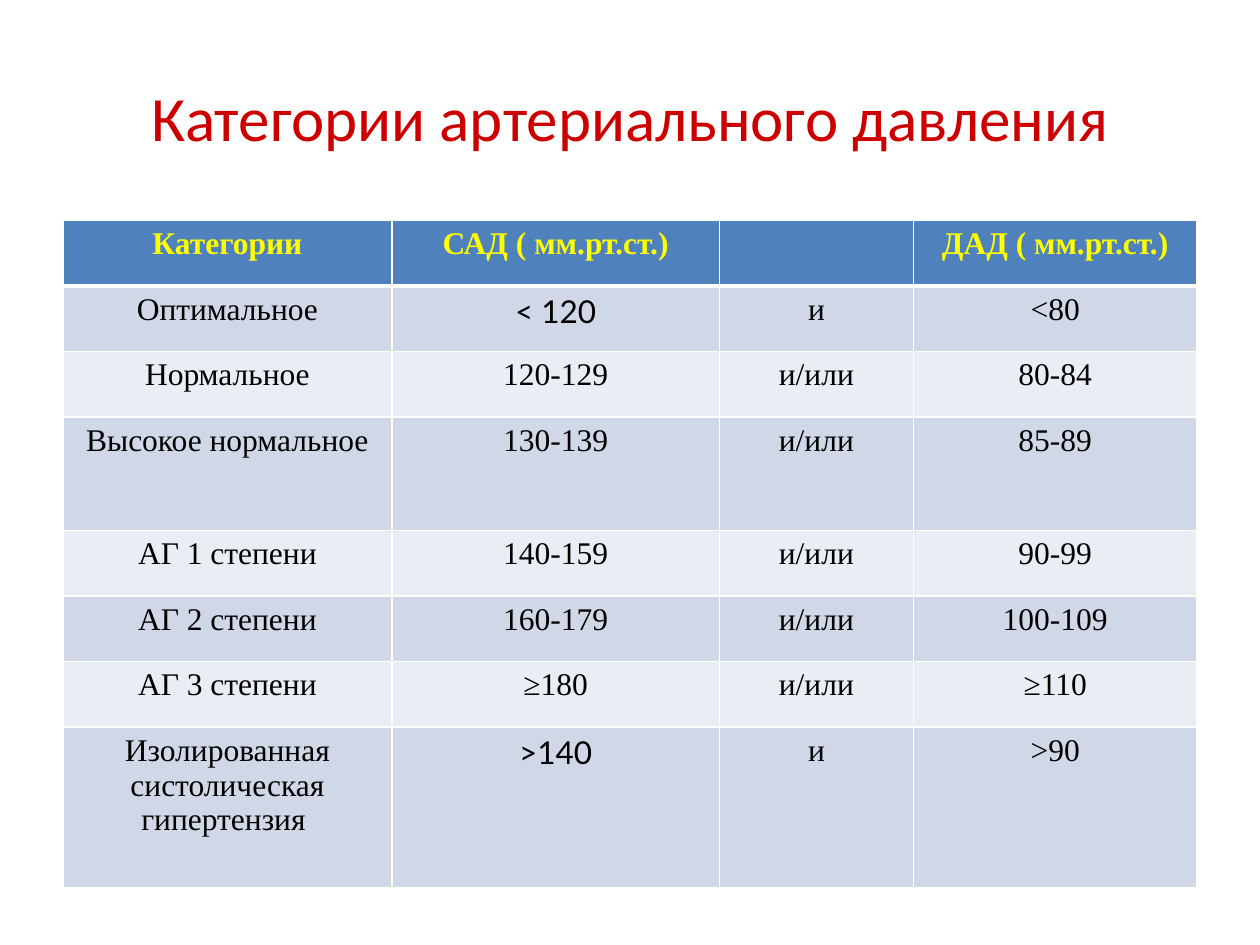
from lxml import etree
from pptx import Presentation
from pptx.dml.color import RGBColor
from pptx.enum.text import MSO_ANCHOR, PP_ALIGN
from pptx.oxml.ns import qn
from pptx.util import Inches, Pt

CENTER = PP_ALIGN.CENTER
MIDDLE = MSO_ANCHOR.MIDDLE

RED = RGBColor(0xCC, 0x00, 0x00)
BLUE = RGBColor(0x4F, 0x81, 0xBD)
YELLOW = RGBColor(0xFF, 0xFF, 0x00)
BLACK = RGBColor(0x00, 0x00, 0x00)
WHITE = RGBColor(0xFF, 0xFF, 0xFF)
BANDS = (RGBColor(0xD0, 0xD8, 0xE8), RGBColor(0xE9, 0xED, 0xF4))

SERIF = "Times New Roman"
SANS = "Lato"

COLS = (2.61, 2.6, 1.54, 2.25)
ROWS = (0.52, 0.52, 0.52, 0.9, 0.52, 0.52, 0.52, 1.28)
DATA = (
    ("Категории", "САД ( мм.рт.ст.)", "", "ДАД ( мм.рт.ст.)"),
    ("Оптимальное", "< 120", "и", "<80"),
    ("Нормальное", "120-129", "и/или", "80-84"),
    ("Высокое нормальное", "130-139", "и/или", "85-89"),
    ("АГ 1 степени", "140-159", "и/или", "90-99"),
    ("АГ 2 степени", "160-179", "и/или", "100-109"),
    ("АГ 3 степени", "≥180", "и/или", "≥110"),
    ("Изолированная систолическая гипертензия ", ">140", "и", ">90"),
)
SANS_CELLS = {(1, 1), (7, 1)}


class Deck:
    def __init__(self):
        self.prs = Presentation()
        self.prs.slide_width = Inches(10)
        self.prs.slide_height = Inches(7.5)
        self.slide = self.prs.slides.add_slide(self.prs.slide_layouts[5])

    def label(self, frame, text, font, size, color, bold=False):
        para = frame.paragraphs[0]
        para.alignment = CENTER
        if not text:
            return
        run = para.add_run()
        run.text = text
        run.font.name = font
        run.font.size = Pt(size)
        run.font.bold = bold
        run.font.color.rgb = color

    def title(self, text):
        shape = self.slide.shapes.title
        shape.left, shape.top = Inches(0.5), Inches(0.3)
        shape.width, shape.height = Inches(9), Inches(1.25)
        shape.text_frame.vertical_anchor = MIDDLE
        self.label(shape.text_frame, text, "Calibri", 36, RED)

    def border(self, cell, side, width):
        props = cell._tc.get_or_add_tcPr()
        line = etree.SubElement(props, qn(f"a:ln{side}"), w=str(Pt(width)))
        fill = etree.SubElement(line, qn("a:solidFill"))
        etree.SubElement(fill, qn("a:srgbClr"), val=str(WHITE))

    def cell(self, cell, row, col, text):
        head = row == 0
        # The rule under the header is shared by the first two rows.
        widths = {"L": 1, "R": 1, "T": 3 if row == 1 else 1, "B": 3 if head else 1}
        for side, width in widths.items():
            self.border(cell, side, width)
        cell.fill.solid()
        cell.fill.fore_color.rgb = BLUE if head else BANDS[(row - 1) % 2]
        font = SANS if (row, col) in SANS_CELLS else SERIF
        self.label(cell.text_frame, text, font, 18, YELLOW if head else BLACK, head)

    def table(self, data, left, top):
        table = self.slide.shapes.add_table(
            len(ROWS), len(COLS), Inches(left), Inches(top),
            Inches(sum(COLS)), Inches(sum(ROWS))).table
        for column, width in zip(table.columns, COLS):
            column.width = Inches(width)
        for line, height in zip(table.rows, ROWS):
            line.height = Inches(height)
        for row, texts in enumerate(data):
            for col, text in enumerate(texts):
                self.cell(table.cell(row, col), row, col, text)


def main():
    deck = Deck()
    deck.title("Категории артериального давления")
    deck.table(DATA, 0.5, 1.75)
    deck.prs.save("out.pptx")


if __name__ == "__main__":
    main()
